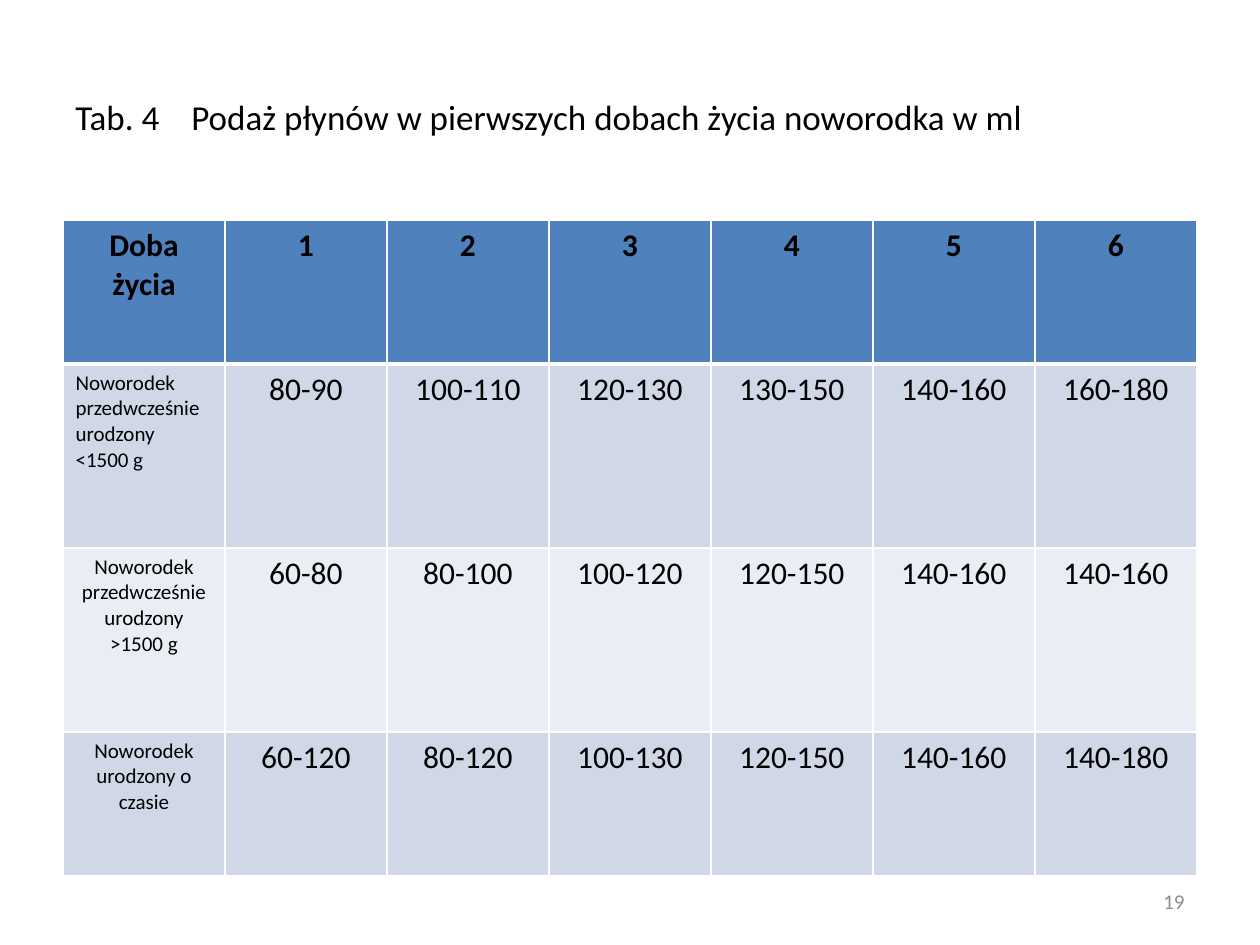
from lxml import etree
from pptx import Presentation
from pptx.dml.color import RGBColor
from pptx.enum.text import MSO_ANCHOR, PP_ALIGN
from pptx.oxml.ns import qn
from pptx.util import Inches, Pt

LEFT, CENTER, RIGHT = PP_ALIGN.LEFT, PP_ALIGN.CENTER, PP_ALIGN.RIGHT
MIDDLE = MSO_ANCHOR.MIDDLE

TITLE = "Tab. 4\tPodaż płynów w pierwszych dobach życia noworodka w ml"
ROWS = [
    ["Doba życia", "1", "2", "3", "4", "5", "6"],
    ["Noworodek przedwcześnie urodzony <1500 g",
     "80-90", "100-110", "120-130", "130-150", "140-160", "160-180"],
    ["Noworodek przedwcześnie urodzony\n>1500 g",
     "60-80", "80-100", "100-120", "120-150", "140-160", "140-160"],
    ["Noworodek urodzony o czasie",
     "60-120", "80-120", "100-130", "120-150", "140-160", "140-180"],
]
HEIGHTS = [1.14, 1.46, 1.46, 1.14]
FILLS = ["4F81BD", "D0D8E8", "E9EDF4", "D0D8E8"]


def rgb(value):
    return RGBColor.from_string(value)


def write(tf, text, size=18, color="000000", bold=False, align=LEFT, font="Calibri", tab=None):
    tf.word_wrap = True
    for i, line in enumerate(text.split("\n")):
        p = tf.paragraphs[0] if i == 0 else tf.add_paragraph()
        p.alignment = align
        if tab:
            tabs = etree.SubElement(p._p.get_or_add_pPr(), qn("a:tabLst"))
            etree.SubElement(tabs, qn("a:tab"), pos=str(Inches(tab)), algn="l")
        r = p.add_run()
        r.text = line
        r.font.name, r.font.size, r.font.bold = font, Pt(size), bold
        r.font.color.rgb = rgb(color)


class Deck:
    """Holds the style and the current slide, placing elements by shares of its size."""

    line = "FFFFFF"

    def __init__(self, width, height):
        self.prs = Presentation()
        self.prs.slide_width, self.prs.slide_height = Inches(width), Inches(height)
        self.s = self.prs.slides.add_slide(self.prs.slide_layouts[6])

    def box(self, x, y, w, h):
        sw, sh = self.prs.slide_width, self.prs.slide_height
        return int(x * sw), int(y * sh), int(w * sw), int(h * sh)

    def text(self, share, text, **fmt):
        tf = self.s.shapes.add_textbox(*self.box(*share)).text_frame
        tf.vertical_anchor = MIDDLE
        write(tf, text, **fmt)

    def border(self, cell, **widths):
        for side, width in widths.items():
            ln = etree.SubElement(cell._tc.get_or_add_tcPr(), qn(f"a:ln{side}"), w=str(Pt(width)))
            fill = etree.SubElement(ln, qn("a:solidFill"))
            etree.SubElement(fill, qn("a:srgbClr"), val=self.line)

    def table(self, share, rows, heights, fills):
        frame = self.s.shapes.add_table(len(rows), len(rows[0]), *self.box(*share))
        table = frame.table
        for i, row in enumerate(rows):
            table.rows[i].height = Inches(heights[i])
            for j, text in enumerate(row):
                cell = table.cell(i, j)
                label = i > 0 and j == 0
                self.border(cell, L=1, R=1, T=3 if i == 1 else 1, B=3 if i == 0 else 1)
                cell.fill.solid()
                cell.fill.fore_color.rgb = rgb(fills[i])
                write(cell.text_frame, text, size=12 if label else 18, bold=i == 0,
                      align=LEFT if label and i == 1 else CENTER)


def main():
    deck = Deck(10, 7.5)
    deck.text((0.05, 0.04, 0.9, 1 / 6), TITLE, size=20, tab=0.92)
    deck.table((0.05, 0.7 / 3, 0.9, 2.08 / 3), ROWS, HEIGHTS, FILLS)
    deck.text((0.717, 2.78 / 3, 0.233, 0.16 / 3), "19", size=12, color="8C8C8C", align=RIGHT)
    deck.prs.save("out.pptx")


if __name__ == "__main__":
    main()
